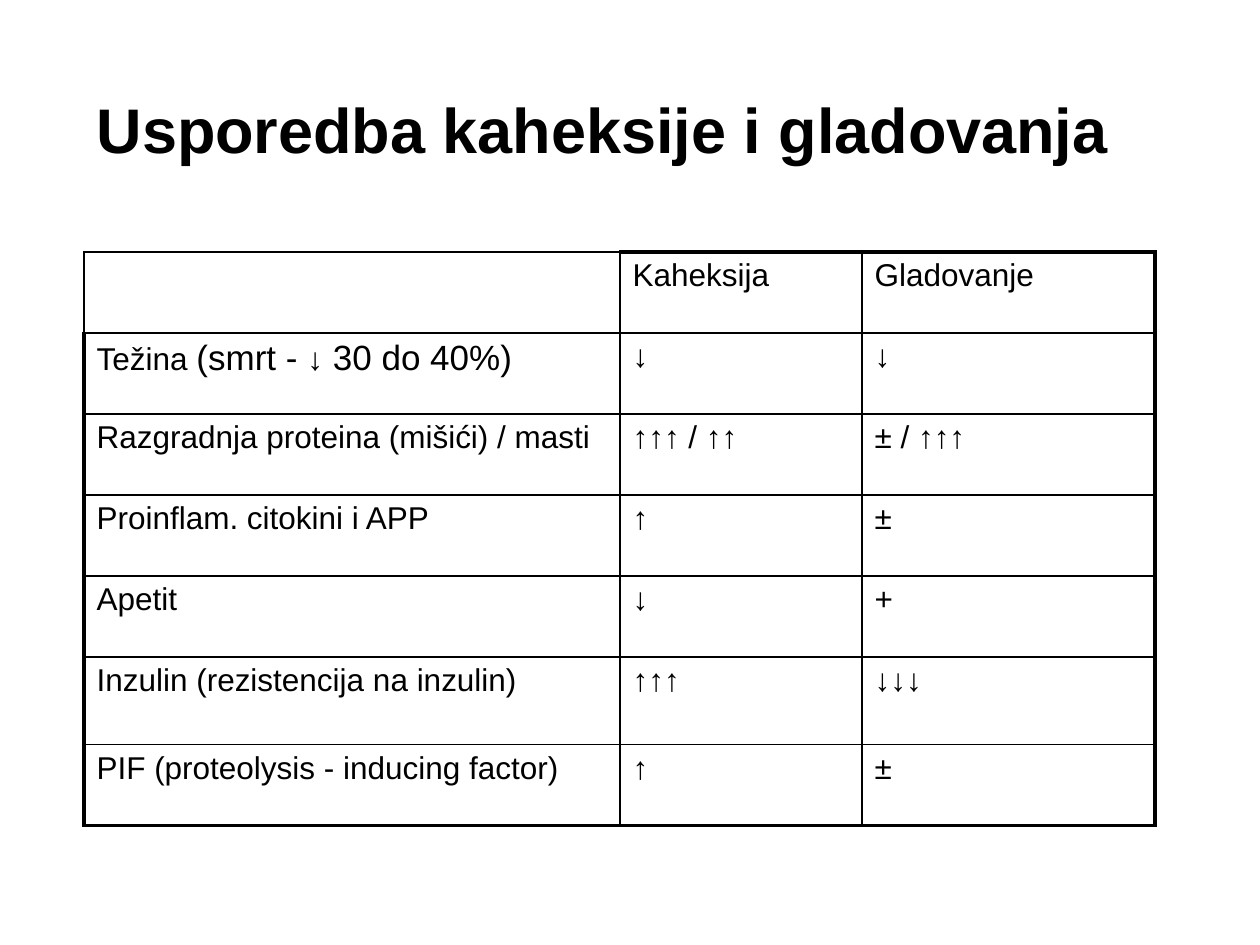
from lxml import etree
from pptx import Presentation
from pptx.dml.color import RGBColor
from pptx.enum.text import MSO_ANCHOR, PP_ALIGN
from pptx.oxml.ns import qn
from pptx.util import Pt

LEFT, MIDDLE = PP_ALIGN.LEFT, MSO_ANCHOR.MIDDLE
SCALE = 914400 / 126
FONT, BLACK = "Arial", "000000"
THIN, THICK = 1, 2.25


def px(n):
    return round(n * SCALE)


def style(p, size, bold=False):
    p.alignment = LEFT
    p.font.name, p.font.size, p.font.bold = FONT, Pt(size), bold
    p.font.color.rgb = RGBColor.from_string(BLACK)


prs = Presentation()
prs.slide_width, prs.slide_height = px(1260), px(945)
s = prs.slides.add_slide(prs.slide_layouts[5])

# Title
title = s.shapes.title
title.left, title.top, title.width, title.height = px(84), px(47), px(1091), px(163)
tf = title.text_frame
tf.text = "Usporedba kaheksije i gladovanja"
tf.vertical_anchor = MIDDLE
style(tf.paragraphs[0], 36, True)

# Comparison table: a cell is text, or a list of (text, size) runs
rows = [
    ("", "Kaheksija", "Gladovanje"),
    ([("Težina ", 18), ("(smrt - ", 20), ("↓", 18), (" 30 do 40%)", 20)], "↓", "↓"),
    ("Razgradnja proteina (mišići) / masti", "↑↑↑ / ↑↑", "± / ↑↑↑"),
    ("Proinflam. citokini i APP", "↑", "±"),
    ("Apetit", "↓", "+"),
    ("Inzulin (rezistencija na inzulin)", "↑↑↑", "↓↓↓"),
    ("PIF (proteolysis - inducing factor)", "↑", "±"),
]
col_widths = [536, 242, 293]
row_heights = [81, 81, 81, 81, 81, 88, 81]
last_row, last_col = len(rows) - 1, len(col_widths) - 1

table = s.shapes.add_table(len(rows), len(col_widths), px(84), px(252),
                           px(sum(col_widths)), px(sum(row_heights))).table
table.first_row = table.horz_banding = False
for column, width in zip(table.columns, col_widths):
    column.width = px(width)
for row, height in zip(table.rows, row_heights):
    row.height = px(height)

for i, row in enumerate(rows):
    for j, content in enumerate(row):
        cell = table.cell(i, j)
        p = cell.text_frame.paragraphs[0]
        style(p, 18)
        if isinstance(content, str):
            p.text = content
        else:
            for text, size in content:
                r = p.add_run()
                r.text, r.font.size = text, Pt(size)

        # Thick outer frame, except around the empty corner cell
        thick = {"lnL": j == 0 and i > 0, "lnR": j == last_col,
                 "lnT": i == 0 and j > 0, "lnB": i == last_row}
        tcPr = cell._tc.get_or_add_tcPr()
        for side, heavy in thick.items():
            ln = etree.SubElement(tcPr, qn("a:" + side), w=str(Pt(THICK if heavy else THIN)))
            fill = etree.SubElement(ln, qn("a:solidFill"))
            etree.SubElement(fill, qn("a:srgbClr"), val=BLACK)
        cell.fill.background()

prs.save("out.pptx")
